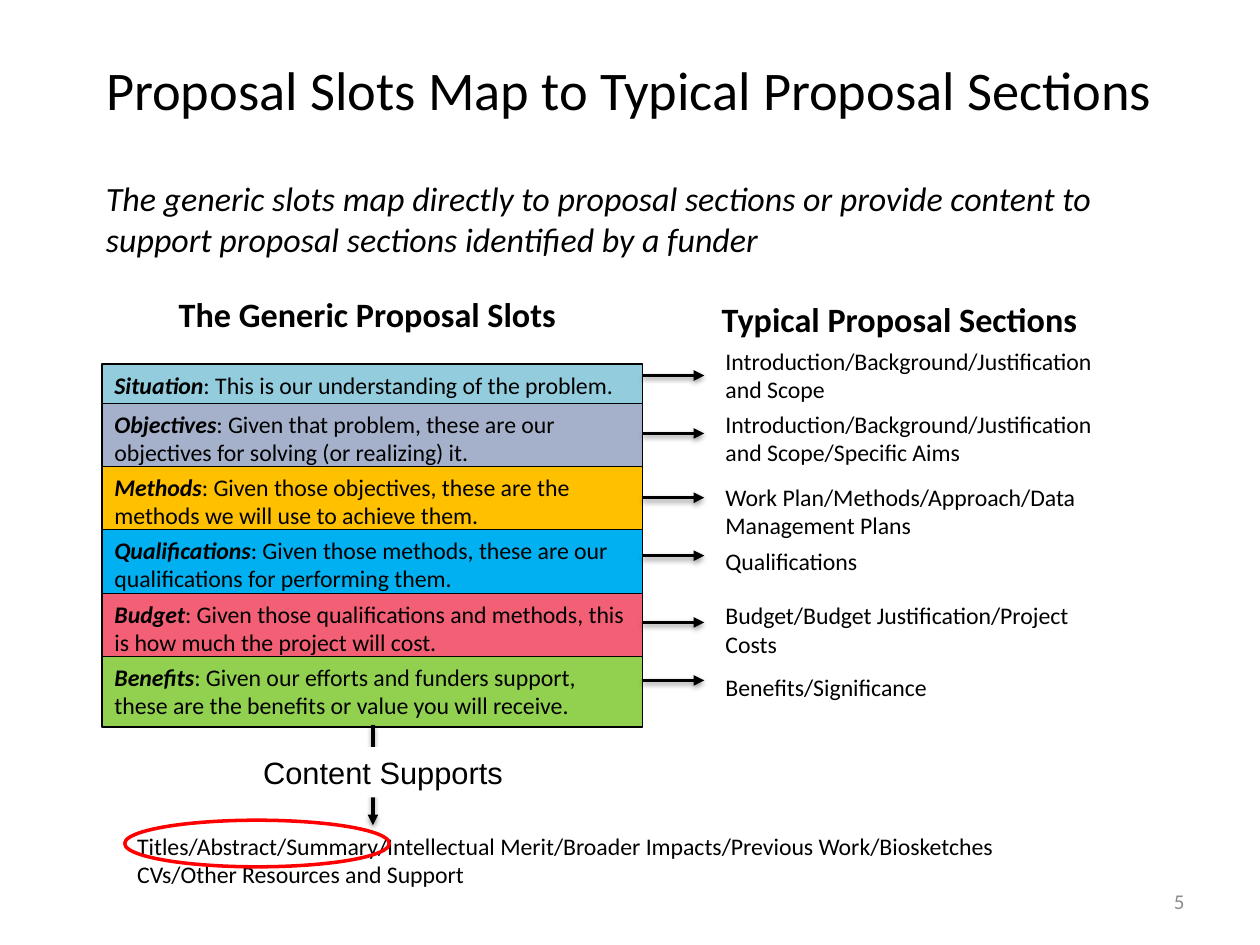
import lxml.etree
import pptx
import pptx.dml.color
import pptx.enum.shapes
import pptx.enum.text
import pptx.oxml
import pptx.oxml.ns
import pptx.util

SCALE = 9144
COLORS = {
    "black": "000000", "white": "FFFFFF", "gray": "8C8C8C", "red": "FF0000",
    "situation": "93CDDD", "objectives": "A5B1CB", "methods": "FFC000",
    "qualifications": "00B0F0", "budget": "F35F74", "benefits": "92D050",
}
SHAPES = pptx.enum.shapes.MSO_SHAPE
ALIGN = pptx.enum.text.PP_ALIGN
ANCHOR = pptx.enum.text.MSO_ANCHOR
SMALL = 13.6

SLOTS = [
    ("Situation", ": This is our understanding of the problem.", 0, 33),
    ("Objectives", ": Given that problem, these are our objectives for solving (or realizing) it.", 31, 56),
    ("Methods", ": Given those objectives, these are the methods we will use to achieve them.", 81, 56),
    ("Qualifications", ": Given those methods, these are our qualifications for performing them.", 131, 56),
    ("Budget", ": Given those qualifications and methods, this is how much the project will cost.", 182, 56),
    ("Benefits", ": Given our efforts and funders support, these are the benefits or value you will receive.", 232, 56),
]
SECTIONS = [
    ("Introduction/Background/Justification and Scope", 0),
    ("Introduction/Background/Justification and Scope/Specific Aims", 50),
    ("Work Plan/Methods/Approach/Data Management Plans", 108),
    ("Qualifications", 159),
    ("Budget/Budget Justification/Project Costs", 202),
    ("Benefits/Significance", 259),
]
ARROW_TOPS = [0, 46, 97, 143, 196, 242]


def px(*lengths):
    """Turn px lengths into EMU."""
    return [pptx.util.Emu(length * SCALE) for length in lengths]


def rgb(name):
    """Look up a named colour."""
    return pptx.dml.color.RGBColor.from_string(COLORS[name])


def place(shape, box):
    """Move and size a shape to a px box."""
    shape.left, shape.top, shape.width, shape.height = px(*box)


def write(shape, paragraphs, size, color="black", font="Calibri",
          align=ALIGN.LEFT, anchor=ANCHOR.TOP):
    """Fill a shape with paragraphs of (text, bold, italic) runs."""
    frame = shape.text_frame
    frame.word_wrap = True
    frame.auto_size = pptx.enum.text.MSO_AUTO_SIZE.NONE
    frame.vertical_anchor = anchor
    for index, runs in enumerate(paragraphs):
        para = frame.add_paragraph() if index else frame.paragraphs[0]
        para.alignment = align
        for text, bold, italic in runs:
            span = para.add_run()
            span.text = text
            span.font.name = font
            span.font.size = pptx.util.Pt(size)
            span.font.bold = bold
            span.font.italic = italic
            span.font.color.rgb = rgb(color)


def add_text(page, box, lines, size, bold=False, **style):
    """Add a text box with one paragraph per line."""
    shape = page.shapes.add_textbox(*px(*box))
    write(shape, [[(line, bold, False)] for line in lines], size, **style)


def add_figure(page, kind, box, fill=None, line=None, weight=0.75):
    """Add a preset shape with the given fill and outline."""
    shape = page.shapes.add_shape(kind, *px(*box))
    shape.shadow.inherit = False
    if fill:
        shape.fill.solid()
        shape.fill.fore_color.rgb = rgb(fill)
    else:
        shape.fill.background()
    if line:
        shape.line.color.rgb = rgb(line)
        shape.line.width = pptx.util.Pt(weight)
    else:
        shape.line.fill.background()
    return shape


def add_arrow(page, start, end):
    """Add a black arrow with a soft shadow below it."""
    arrow = page.shapes.add_connector(
        pptx.enum.shapes.MSO_CONNECTOR.STRAIGHT, *px(*start, *end))
    arrow.line.color.rgb = rgb("black")
    arrow.line.width = pptx.util.Pt(2)
    qn = pptx.oxml.ns.qn
    properties = arrow.line._get_or_add_ln()
    lxml.etree.SubElement(properties, qn("a:tailEnd"), type="triangle")
    effects = lxml.etree.SubElement(properties.getparent(), qn("a:effectLst"))
    shadow = lxml.etree.SubElement(
        effects, qn("a:outerShdw"), blurRad="39370", dist="20320",
        dir="5400000", rotWithShape="0")
    tint = lxml.etree.SubElement(shadow, qn("a:srgbClr"), val=COLORS["black"])
    lxml.etree.SubElement(tint, qn("a:alpha"), val="38000")


def add_header(page, title_box, body_box):
    """Fill the title and the introductory sentence."""
    title, body = page.shapes.title, page.placeholders[1]
    place(title, title_box)
    write(title, [[("Proposal Slots Map to Typical Proposal Sections", False, False)]],
          31.1, align=ALIGN.CENTER, anchor=ANCHOR.MIDDLE)
    place(body, body_box)
    write(body, [[("The generic slots map directly to proposal sections or provide "
                   "content to support proposal sections identified by a funder",
                   False, True)]], 19.4, anchor=ANCHOR.MIDDLE)
    para = body.text_frame.paragraphs[0]
    para.space_before = pptx.util.Pt(0)
    settings = para._p.get_or_add_pPr()
    settings.set("marL", "0")
    settings.set("indent", "0")
    lxml.etree.SubElement(settings, pptx.oxml.ns.qn("a:buNone"))


def add_slots(page, left, top, width):
    """Stack the six generic slots under their heading."""
    add_text(page, (left + 51, top - 61, 321, 43),
             ["The Generic Proposal Slots"], 19.5, bold=True)
    for name, meaning, offset, height in SLOTS:
        slot = add_figure(page, SHAPES.RECTANGLE, (left, top + offset, width, height),
                          fill=name.lower(), line="black")
        write(slot, [[(name, True, True), (meaning, False, False)]], SMALL)


def add_sections(page, left, top, width):
    """List the typical sections under their heading."""
    add_text(page, (left - 3, top - 38, 304, 43),
             ["Typical Proposal Sections"], 19.5, bold=True)
    for name, offset in SECTIONS:
        add_text(page, (left, top + offset, width, 56), [name], SMALL)


def add_mapping(page, left, top, width):
    """Draw one arrow from each slot to its section."""
    for offset in ARROW_TOPS:
        add_arrow(page, (left, top + offset), (left + width, top + offset))


def add_supports(page, left, top):
    """Show the further content that the slots support."""
    add_arrow(page, (left + 197, top), (left + 197, top + 80))
    add_text(page, (left, top + 80, 707, 79),
             ["Titles/Abstract/Summary/Intellectual Merit/Broader Impacts/Previous Work/Biosketches",
              "CVs/Other Resources and Support"], SMALL)
    label = add_figure(page, SHAPES.RECTANGLE, (left + 100, top + 18, 213, 40), fill="white")
    write(label, [[("Content Supports", False, False)]], 17.6, font="Arial",
          anchor=ANCHOR.MIDDLE)
    add_figure(page, SHAPES.OVAL, (left, top + 76, 210, 37), line="red", weight=2)


def main():
    """Build and save the deck."""
    deck = pptx.Presentation()
    deck.slide_width, deck.slide_height = px(1000, 750)
    page = deck.slides.add_slide(deck.slide_layouts[1])
    add_header(page, (62, 10, 874, 121), (74, 136, 836, 75))
    add_slots(page, 81, 289, 429)
    add_sections(page, 566, 270, 330)
    add_mapping(page, 510, 298, 49)
    add_supports(page, 99, 575)
    add_text(page, (717, 695, 233, 40), ["5"], 12, color="gray",
             align=ALIGN.RIGHT, anchor=ANCHOR.MIDDLE)
    deck.save("out.pptx")


if __name__ == "__main__":
    main()
